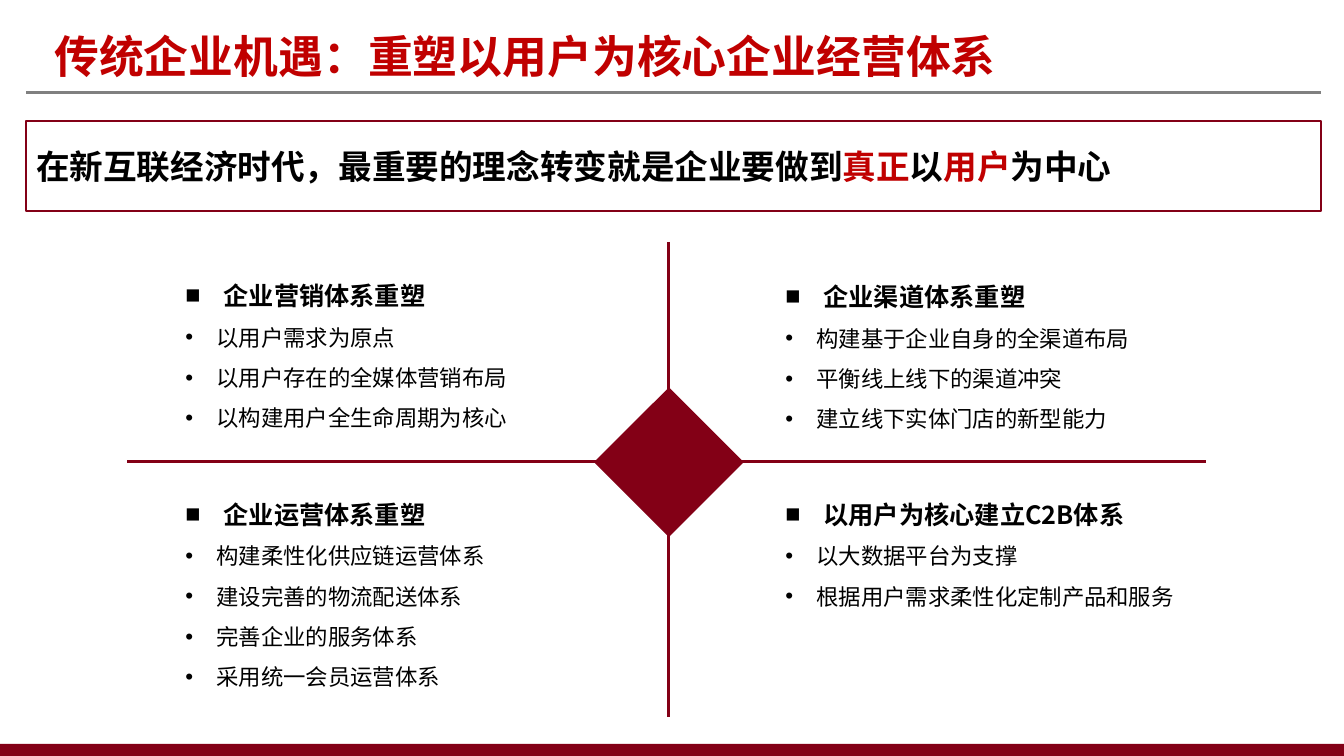
from dataclasses import dataclass

import lxml.etree
import pptx
import pptx.dml.color
import pptx.enum.shapes
import pptx.enum.text
import pptx.oxml.ns
import pptx.util

EMU_PER_PX = 9144  # 100 px to the inch
SLIDE_WIDTH, SLIDE_HEIGHT = 1333, 750
MAROON, RED, BLACK, GREY = "830016", "C00000", "000000", "808080"
SANS, SERIF = "Noto Sans CJK SC", "Times New Roman"
MARGIN_LEFT, MARGIN_RIGHT = 26, 1310
CENTRE_X, CENTRE_Y = 663, 458
DIAMOND_SIZE = 147


@dataclass(frozen=True)
class Box:
    left: int
    top: int
    width: int
    height: int

    def emu(self) -> list[int]:
        return [px(n) for n in (self.left, self.top, self.width, self.height)]


@dataclass(frozen=True)
class Rule:
    start: tuple[int, int]
    end: tuple[int, int]
    color: str


@dataclass(frozen=True)
class Quadrant:
    box: Box
    heading: str
    points: tuple[str, ...]


@dataclass(frozen=True)
class Bullet:
    mark: str
    indent: int
    size: int
    bold: bool


HEADING = Bullet("■", 38, 18, True)
POINT = Bullet("•", 31, 16, False)

RULES = (
    Rule((MARGIN_LEFT, 92), (MARGIN_RIGHT, 92), GREY),
    Rule((126, CENTRE_Y), (1196, CENTRE_Y), MAROON),
    Rule((CENTRE_X, 240), (CENTRE_X, 711), MAROON),
)

QUADRANTS = (
    Quadrant(Box(174, 258, 442, 177), "企业营销体系重塑",
             ("以用户需求为原点", "以用户存在的全媒体营销布局", "以构建用户全生命周期为核心")),
    Quadrant(Box(769, 259, 427, 177), "企业渠道体系重塑",
             ("构建基于企业自身的全渠道布局", "平衡线上线下的渠道冲突", "建立线下实体门店的新型能力")),
    Quadrant(Box(174, 475, 407, 222), "企业运营体系重塑",
             ("构建柔性化供应链运营体系", "建设完善的物流配送体系",
              "完善企业的服务体系", "采用统一会员运营体系")),
    Quadrant(Box(769, 475, 464, 141), "以用户为核心建立C2B体系",
             ("以大数据平台为支撑", "根据用户需求柔性化定制产品和服务")),
)

MESSAGE = (
    ("在新互联经济时代，最重要的理念转变就是企业要做到", BLACK),
    ("真正", RED),
    ("以", BLACK),
    ("用户", RED),
    ("为中心", BLACK),
)


def px(length: int) -> int:
    return pptx.util.Emu(length * EMU_PER_PX)


def rgb(color: str) -> pptx.dml.color.RGBColor:
    return pptx.dml.color.RGBColor.from_string(color)


def add_element(parent, tag: str, **attributes: str) -> None:
    element = lxml.etree.SubElement(parent, pptx.oxml.ns.qn(tag))
    for name, value in attributes.items():
        element.set(name, value)


def add_run(paragraph, text: str, size: int, color: str, bold: bool, latin: str = SANS) -> None:
    run = paragraph.add_run()
    run.text = text
    run.font.size = pptx.util.Pt(size)
    run.font.bold = bold
    run.font.color.rgb = rgb(color)
    run.font.name = latin
    add_element(run.font._element, "a:ea", typeface=SANS)


def add_rule(slide, rule: Rule) -> None:
    line = slide.shapes.add_connector(
        pptx.enum.shapes.MSO_CONNECTOR.STRAIGHT,
        *(px(n) for n in rule.start + rule.end))
    line.line.color.rgb = rgb(rule.color)
    line.line.width = pptx.util.Pt(2.25)
    add_element(line._element.spPr, "a:effectLst")


def add_block(slide, kind, box: Box, fill: str | None, line_width: float):
    """Add a preset shape with a maroon outline; zero width means no outline."""
    shape = slide.shapes.add_shape(kind, *box.emu())
    shape.shadow.inherit = False
    if fill:
        shape.fill.solid()
        shape.fill.fore_color.rgb = rgb(fill)
    else:
        shape.fill.background()
    if line_width:
        shape.line.color.rgb = rgb(MAROON)
        shape.line.width = pptx.util.Pt(line_width)
    else:
        shape.line.fill.background()
    return shape


def add_text_frame(slide, box: Box):
    frame = slide.shapes.add_textbox(*box.emu()).text_frame
    frame.word_wrap = True
    return frame


def add_bullet_text(paragraph, text: str, bullet: Bullet) -> None:
    properties = paragraph._p.get_or_add_pPr()
    properties.set("marL", str(px(bullet.indent)))
    properties.set("indent", str(-px(bullet.indent)))
    add_element(properties, "a:buFont", typeface="Arial")
    add_element(properties, "a:buChar", char=bullet.mark)
    paragraph.line_spacing = 1.5
    add_run(paragraph, text, bullet.size, BLACK, bullet.bold)


def add_quadrant(slide, quadrant: Quadrant) -> None:
    frame = add_text_frame(slide, quadrant.box)
    add_bullet_text(frame.paragraphs[0], quadrant.heading, HEADING)
    for point in quadrant.points:
        add_bullet_text(frame.add_paragraph(), point, POINT)


def add_message(slide) -> None:
    box = Box(MARGIN_LEFT, 120, MARGIN_RIGHT - MARGIN_LEFT, 89)
    frame = add_block(slide, pptx.enum.shapes.MSO_SHAPE.RECTANGLE, box, None, 1.5).text_frame
    frame.word_wrap = True
    frame.vertical_anchor = pptx.enum.text.MSO_ANCHOR.MIDDLE
    paragraph = frame.paragraphs[0]
    paragraph.alignment = pptx.enum.text.PP_ALIGN.LEFT
    for text, color in MESSAGE:
        add_run(paragraph, text, 24, color, True)


def main() -> None:
    presentation = pptx.Presentation()
    presentation.slide_width = px(SLIDE_WIDTH)
    presentation.slide_height = px(SLIDE_HEIGHT)
    slide = presentation.slides.add_slide(presentation.slide_layouts[6])

    title = add_text_frame(slide, Box(44, 24, 1009, 64))
    add_run(title.paragraphs[0], "传统企业机遇：重塑以用户为核心企业经营体系", 32, RED, True, SERIF)
    add_message(slide)
    for rule in RULES:
        add_rule(slide, rule)
    diamond = Box(CENTRE_X - DIAMOND_SIZE // 2, CENTRE_Y - DIAMOND_SIZE // 2,
                  DIAMOND_SIZE, DIAMOND_SIZE)
    add_block(slide, pptx.enum.shapes.MSO_SHAPE.DIAMOND, diamond, MAROON, 0.75)
    for quadrant in QUADRANTS:
        add_quadrant(slide, quadrant)
    footer = Box(0, 738, SLIDE_WIDTH, SLIDE_HEIGHT - 738)
    add_block(slide, pptx.enum.shapes.MSO_SHAPE.RECTANGLE, footer, MAROON, 0)

    presentation.save("out.pptx")


if __name__ == "__main__":
    main()
